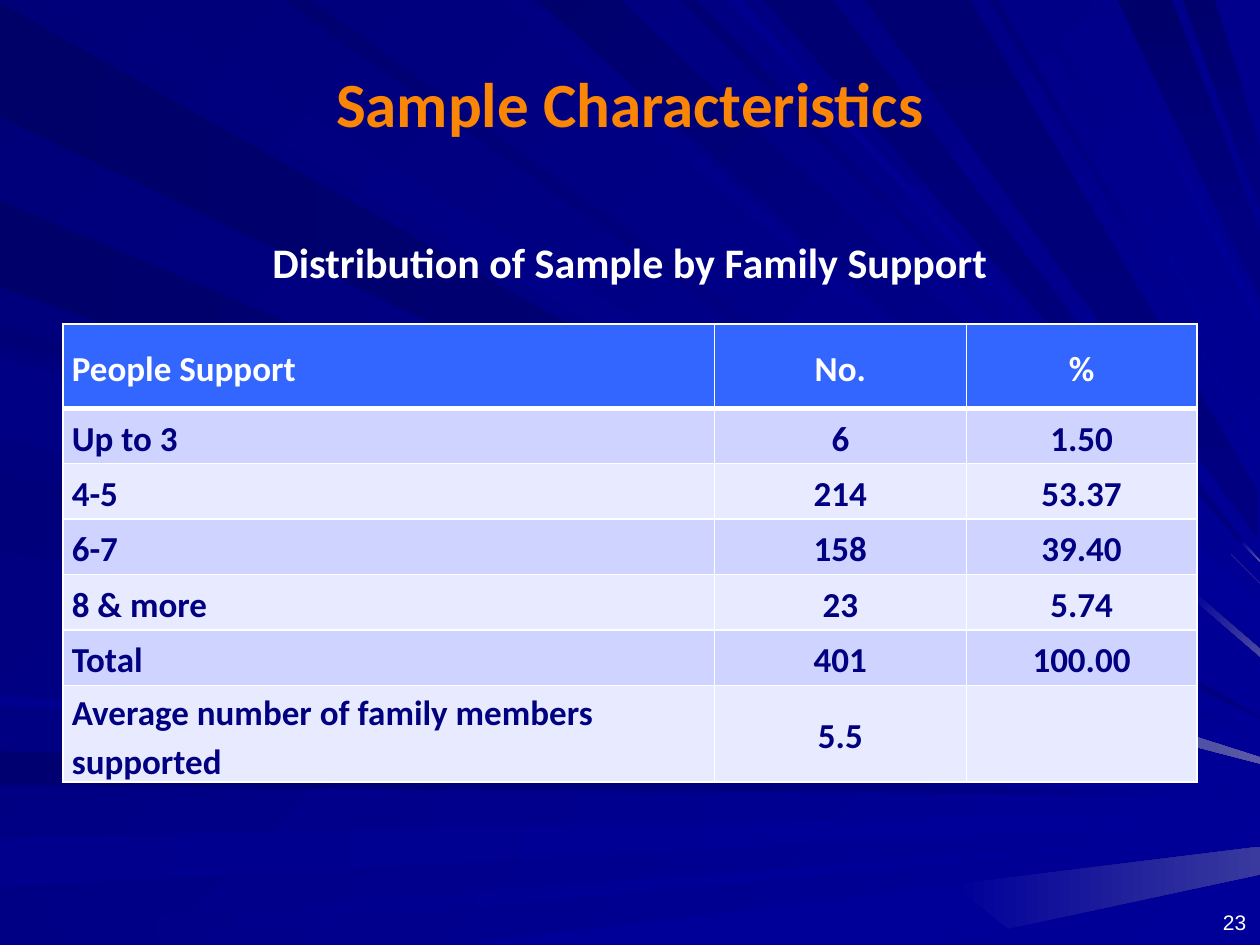
from lxml import etree
from pptx import Presentation
from pptx.dml.color import RGBColor
from pptx.enum.text import MSO_ANCHOR as Anchor, PP_ALIGN as Align
from pptx.oxml.ns import qn
from pptx.util import Inches, Pt

# The slide is a grid of 1000 columns by 750 rows
UNIT = Inches(0.01)
COLS, ROWS = 1000, 750
MARGIN = 50
WHITE, ORANGE, NAVY = "FFFFFF", "FB8605", "000080"
HEADER, BANDS = "3366FF", ("CED3FF", "E8EAFF")

# Background rays, back to front: first colour, last colour, angle, corners
RAYS = [
    ("000069", "000080", 0, "556,317 0,2 0,93 529,345 1000,570 1000,569"),
    ("00007B", "000099", 45, "577,298 101,0 26,0 563,310 1000,563 1000,562"),
    ("000071", "000080", 0, "0,623 701,629 701,621 0,596"),
    ("000080", "000099", 0, "1000,632 1000,631 701,621 701,629"),
    ("00008C", "000099", 0, "0,704 831,660 831,647 0,665"),
    ("000099", "000099", 0, "1000,651 1000,643 831,647 831,660"),
    ("000099", "000099", 0, "1000,662 628,689 628,697"),
    ("000085", "000099", 0, "0,750 54,750 628,697 628,689 0,735"),
    ("000099", "000099", 0, "742,750 801,737 756,702 364,750"),
    ("000099", "39399E", 0, "1000,694 1000,672 756,702 800,737"),
    ("000099", "000099", 0, "1000,589 873,547 873,548"),
    ("000076", "000099", 45, "0,270 873,548 873,547 0,258"),
    ("000080", "000099", 0, "1000,585 1000,584 873,529 873,539"),
    ("00006B", "000080", 0, "0,228 873,539 873,529 0,159"),
    ("000083", "000099", 45, "398,0 944,473 947,469 416,0"),
    ("000099", "4A4AA1", 45, "1000,521 1000,515 947,469 944,473"),
    ("000099", "000099", 0, "1000,507 1000,479 968,449 951,465"),
    ("00006D", "000099", 45, "426,0 951,465 968,449 492,0"),
    ("FF9999", "FF9999", 0, "1000,463 977,440 977,440"),
    ("000073", "000099", 45, "540,0 977,440 977,440 552,0"),
    ("000073", "000080", 90, "606,0 985,431 987,430 661,0"),
    ("000099", "5A5AA6", 45, "1000,446 1000,445 987,430 985,431"),
    ("000080", "000080", 0, "1000,237 1000,183 986,148 973,181"),
    ("00006B", "000080", 90, "887,0 973,181 986,148 930,0"),
    ("00006D", "000080", 90, "964,0 939,0 989,138 999,113"),
    ("000080", "000080", 0, "989,138 1000,167 1000,114 999,113"),
    ("00007E", "000099", 45, "0,342 999,602 999,596 0,278"),
    ("00007B", "000099", 45, "0,437 999,606 999,605 0,374"),
    ("00008E", "000099", 0, "0,560 999,623 999,621 0,552"),
    ("000070", "000099", 45, "225,0 999,552 999,547 247,0"),
    ("00008E", "000099", 45, "577,0 999,454 999,453 588,0"),
    ("000073", "000080", 90, "770,0 686,0 999,428 999,390 998,390"),
    ("000078", "000099", 45, "785,0 999,360 999,354 792,0"),
    ("000085", "000099", 45, "815,0 999,336 999,335 824,0"),
    ("00008A", "000099", 45, "999,249 872,0 865,0 999,258"),
    ("000085", "000099", 0, "0,283 0,347 633,511 635,498 637,485"),
    ("000099", "5A5AA6", 0, "1000,601 637,485 635,498 633,511 1000,606"),
]

COLUMN_WIDTHS = (517, 200, 183)
ROW_HEIGHTS = (67, 44, 44, 44, 44, 44, 75)
SUPPORT = [
    ("People Support", "No.", "%"),
    ("Up to 3", "6", "1.50"),
    ("4-5", "214", "53.37"),
    ("6-7", "158", "39.40"),
    ("8 & more", "23", "5.74"),
    ("Total", "401", "100.00"),
    ("Average number of family members supported", "5.5", ""),
]


def rgb(color):
    return RGBColor.from_string(color)


def paint(fill, first, last, angle=0):
    """Solid when both colours agree, else a gradient at a clockwise angle."""
    if first == last:
        fill.solid()
        fill.fore_color.rgb = rgb(first)
        return
    fill.gradient()
    fill.gradient_angle = (360 - angle) % 360
    for stop, color in zip(fill.gradient_stops, (first, last)):
        stop.color.rgb = rgb(color)


def write(p, text, size, color, align, font="Calibri", bold=True):
    p.alignment = align
    r = p.add_run()
    r.text = text
    r.font.name, r.font.size, r.font.bold = font, Pt(size), bold
    r.font.color.rgb = rgb(color)


def add_text(slide, box, text, size, color, align=Align.CENTER,
             anchor=Anchor.TOP, **style):
    tf = slide.shapes.add_textbox(*(v * UNIT for v in box)).text_frame
    tf.word_wrap = True
    tf.vertical_anchor = anchor
    write(tf.paragraphs[0], text, size, color, align, **style)


def add_background(slide):
    paint(slide.background.fill, "000078", "000099", 45)
    rays = slide.shapes.add_group_shape().shapes
    for first, last, angle, corners in RAYS:
        points = [tuple(map(int, c.split(","))) for c in corners.split()]
        builder = rays.build_freeform(*points[0], scale=UNIT)
        builder.add_line_segments(points[1:], close=True)
        sp = builder.convert_to_shape()
        sp.shadow.inherit = False
        sp.line.fill.background()
        paint(sp.fill, first, last, angle)


def set_borders(cell, **widths):
    """White borders; the lines must come before the fill."""
    tcPr = cell._tc.get_or_add_tcPr()
    for i, side in enumerate("LRTB"):
        ln = etree.Element(qn(f"a:ln{side}"), w=str(Pt(widths.get(side, 1))))
        fill = etree.SubElement(ln, qn("a:solidFill"))
        etree.SubElement(fill, qn("a:srgbClr"), val=WHITE)
        tcPr.insert(i, ln)


def add_support_table(slide, box):
    table = slide.shapes.add_table(len(SUPPORT), len(COLUMN_WIDTHS),
                                   *(v * UNIT for v in box)).table
    table.first_row = table.horz_banding = False
    for column, width in zip(table.columns, COLUMN_WIDTHS):
        column.width = width * UNIT
    for i, (row, height) in enumerate(zip(table.rows, ROW_HEIGHTS)):
        row.height = height * UNIT
        color = NAVY if i else WHITE
        band = BANDS[(i - 1) % 2] if i else HEADER
        rule = {0: {"B": 3}, 1: {"T": 3}}.get(i, {})
        for j, (cell, text) in enumerate(zip(row.cells, SUPPORT[i])):
            paint(cell.fill, band, band)
            set_borders(cell, **rule)
            cell.margin_left = cell.margin_right = 7 * UNIT
            cell.margin_top = cell.margin_bottom = 0
            cell.vertical_anchor = Anchor.MIDDLE
            if text:
                p = cell.text_frame.paragraphs[0]
                p.line_spacing = 1.15
                write(p, text, 20, color, Align.CENTER if j else Align.LEFT)


def main():
    prs = Presentation()
    prs.slide_width, prs.slide_height = COLS * UNIT, ROWS * UNIT
    slide = prs.slides.add_slide(prs.slide_layouts[6])
    width = COLS - 2 * MARGIN

    add_background(slide)
    # Title, table with its caption, page number
    add_text(slide, (MARGIN, 30, width, 103), "Sample Characteristics",
             36, ORANGE, anchor=Anchor.MIDDLE)
    add_support_table(slide, (MARGIN, 257, width, sum(ROW_HEIGHTS)))
    add_text(slide, (MARGIN, 183, width, 50),
             "Distribution of Sample by Family Support", 24, WHITE)
    add_text(slide, (766, 707, 233, 40), "23", 12, WHITE, Align.RIGHT,
             Anchor.BOTTOM, font="Arial", bold=False)
    prs.save("out.pptx")


if __name__ == "__main__":
    main()
